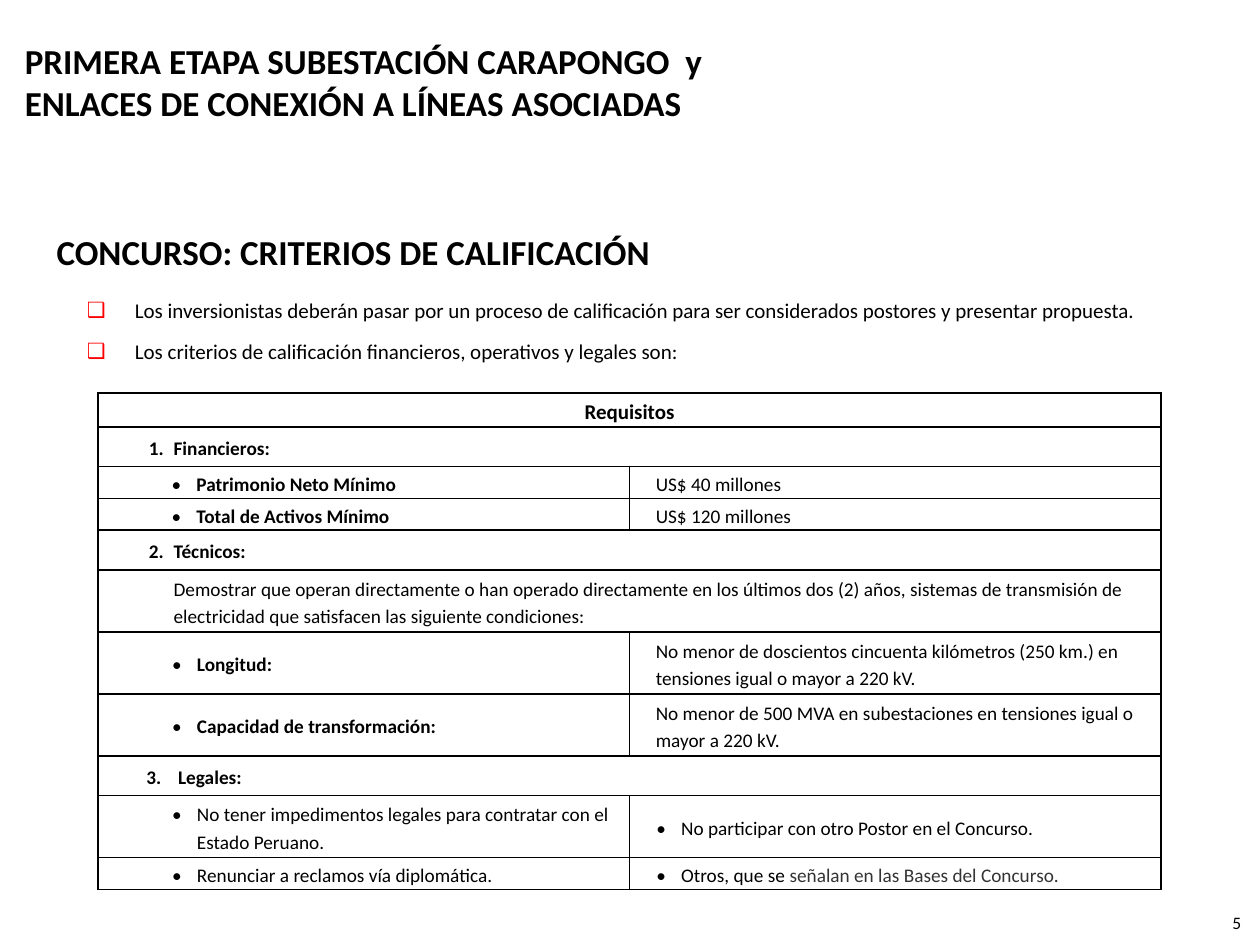
import dataclasses

import lxml.etree
import pptx
import pptx.dml.color
import pptx.enum.text
import pptx.oxml.ns
import pptx.util

Cm = pptx.util.Cm
Align = pptx.enum.text.PP_ALIGN
Anchor = pptx.enum.text.MSO_ANCHOR


@dataclasses.dataclass(frozen=True)
class Theme:
    font: str = "Calibri"
    ink: str = "000000"
    soft: str = "333333"
    marker: str = "FF0000"
    title: int = 20
    lead: int = 12
    cell: int = 11
    number: int = 10
    border: int = 1


THEME = Theme()

# Row heights (cm)
HEADER, SECTION, SINGLE, DOUBLE = 0.69, 0.8, 0.64, 1.25

# Paragraph formats used in the table cells
NUMBER = dict(indent=1.5, hang=0.5, bold=True)
WIDE_BULLET = dict(inset=0.48, indent=1.5, hang=0.5, bullet="•", bold=True)
BULLET = dict(inset=0.97, indent=1.02, hang=0.5, bullet="•")
BOLD_BULLET = dict(BULLET, bold=True)
VALUE = dict(indent=0.51)
RIGHT_BULLET = dict(indent=1.02, hang=0.5, bullet="•", align=Align.JUSTIFY)

# Each row: height, then (text, format) per cell; a lone cell spans the row
ROWS = [
    (HEADER, ("Requisitos", dict(size=THEME.lead, bold=True, align=Align.CENTER))),
    (SECTION, ("Financieros:", dict(NUMBER, start=1))),
    (SINGLE, ("Patrimonio Neto Mínimo", WIDE_BULLET), ("US$ 40 millones", VALUE)),
    (SINGLE, ("Total de Activos Mínimo", WIDE_BULLET), ("US$ 120 millones", VALUE)),
    (SECTION, ("Técnicos:", dict(NUMBER, start=2))),
    (DOUBLE, ("Demostrar que operan directamente o han operado directamente en los "
              "últimos dos (2) años, sistemas de transmisión de electricidad que "
              "satisfacen las siguiente condiciones:", dict(indent=1.5))),
    (DOUBLE, ("Longitud:", BOLD_BULLET),
     ("No menor de doscientos cincuenta kilómetros (250 km.) en tensiones igual "
      "o mayor a 220 kV.", VALUE)),
    (DOUBLE, ("Capacidad de transformación:", BOLD_BULLET),
     ("No menor de 500 MVA en subestaciones en tensiones igual o mayor a 220 kV.",
      VALUE)),
    (SECTION, ("Legales:", dict(inset=0.97, indent=0.64, hang=0.64, bold=True, start=3))),
    (DOUBLE, ("No tener impedimentos legales para contratar con el Estado Peruano.",
              BULLET),
     ("No participar con otro Postor en el Concurso.", RIGHT_BULLET)),
    (SINGLE, ("Renunciar a reclamos vía diplomática.", BULLET),
     ("Otros, que se", dict(RIGHT_BULLET, tail=" señalan en las Bases del Concurso."))),
]


def add_element(parent, tag, **attributes):
    return lxml.etree.SubElement(parent, pptx.oxml.ns.qn(tag), attributes)


def add_span(para, text, size, bold, color):
    span = para.add_run()
    span.text = text
    span.font.name = THEME.font
    span.font.size = pptx.util.Pt(size)
    span.font.bold = bold
    span.font.color.rgb = pptx.dml.color.RGBColor.from_string(color)


def write_text(frame, text, size=THEME.cell, bold=False, color=THEME.ink,
               align=Align.LEFT, indent=0, hang=0, bullet=None, bullet_color=None,
               start=None, spacing=None, after=0, tail=None):
    """Fill the empty first paragraph of the frame, or add one below."""
    para = frame.paragraphs[0]
    if para.runs:
        para = frame.add_paragraph()
    para.alignment = align
    para.space_before = pptx.util.Pt(0)
    para.space_after = pptx.util.Pt(after)
    if spacing:
        para.line_spacing = spacing
    properties = para._p.get_or_add_pPr()
    properties.set("marL", str(int(Cm(indent))))
    properties.set("indent", str(-int(Cm(hang))))
    if bullet_color:
        add_element(add_element(properties, "a:buClr"), "a:srgbClr", val=bullet_color)
    if bullet:
        add_element(properties, "a:buFont", typeface=THEME.font)
        add_element(properties, "a:buChar", char=bullet)
    elif start:
        add_element(properties, "a:buAutoNum", type="arabicPeriod", startAt=str(start))
    else:
        add_element(properties, "a:buNone")
    add_span(para, text, size, bold, color)
    if tail:
        add_span(para, tail, size, bold, THEME.soft)


def add_box(page, left, top, width, height, lines, anchor=Anchor.TOP, **text_format):
    box = page.shapes.add_textbox(Cm(left), Cm(top), Cm(width), Cm(height))
    frame = box.text_frame
    frame.word_wrap = True
    frame.vertical_anchor = anchor
    for line in lines:
        write_text(frame, line, **text_format)


def draw_borders(cell):
    properties = cell._tc.get_or_add_tcPr()
    for position, side in enumerate(("lnL", "lnR", "lnT", "lnB")):
        width = str(int(pptx.util.Pt(THEME.border)))
        line = add_element(properties, "a:" + side, w=width)
        add_element(add_element(line, "a:solidFill"), "a:srgbClr", val=THEME.ink)
        properties.insert(position, line)


def fill_cell(cell, text, inset=0.02, **text_format):
    cell.margin_left = Cm(inset)
    cell.margin_right = cell.margin_top = Cm(0.02)
    cell.margin_bottom = 0
    cell.vertical_anchor = Anchor.MIDDLE
    write_text(cell.text_frame, text, spacing=1.15, **text_format)


def add_requirements(page, left, top, column_width):
    height = sum(row[0] for row in ROWS)
    table = page.shapes.add_table(len(ROWS), 2, Cm(left), Cm(top),
                                  Cm(2 * column_width), Cm(height)).table
    table.first_row = table.horz_banding = False
    for column in table.columns:
        column.width = Cm(column_width)
    for index, (row_height, *entries) in enumerate(ROWS):
        table.rows[index].height = Cm(row_height)
        for column in range(2):
            cell = table.cell(index, column)
            cell.fill.background()
            draw_borders(cell)
        if len(entries) == 1:
            table.cell(index, 0).merge(table.cell(index, 1))
        for column, (text, text_format) in enumerate(entries):
            fill_cell(table.cell(index, column), text, **text_format)


def main():
    deck = pptx.Presentation()
    deck.slide_width, deck.slide_height = Cm(25.4), Cm(19.05)
    page = deck.slides.add_slide(deck.slide_layouts[6])

    # Headings
    add_box(page, 0, 0.53, 14.58, 2.21,
            ["PRIMERA ETAPA SUBESTACIÓN CARAPONGO  y",
             "ENLACES DE CONEXIÓN A LÍNEAS ASOCIADAS"],
            anchor=Anchor.MIDDLE, size=THEME.title, bold=True, indent=0.25)
    add_box(page, 0.89, 4.32, 13.08, 1.52, ["CONCURSO: CRITERIOS DE CALIFICACIÓN"],
            anchor=Anchor.MIDDLE, size=THEME.title, bold=True)

    # Introduction
    add_box(page, 1.5, 5.87, 22.81, 1.9,
            ["Los inversionistas deberán pasar por un proceso de calificación para "
             "ser considerados postores y presentar propuesta.",
             "Los criterios de calificación financieros, operativos y legales son:"],
            size=THEME.lead, indent=0.97, hang=0.97, bullet="❑",
            bullet_color=THEME.marker, after=9)

    # Requirements table
    add_requirements(page, 1.98, 7.92, 10.71)

    # Page number
    add_box(page, 24, 18.26, 1.27, 0.81, ["5"], size=THEME.number, align=Align.RIGHT)

    deck.save("out.pptx")


if __name__ == "__main__":
    main()
